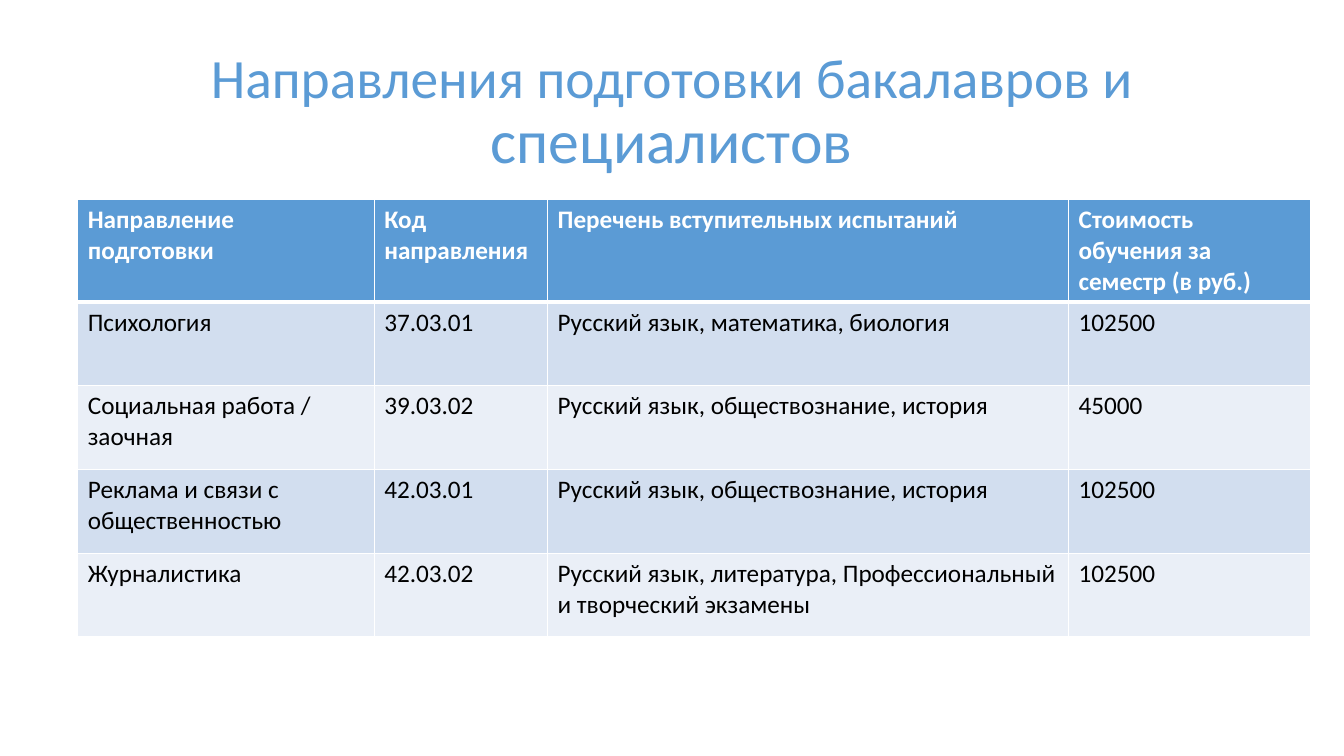
from lxml import etree
from pptx import Presentation
from pptx import util as u
from pptx.dml.color import RGBColor
from pptx.enum import text
from pptx.oxml.ns import qn

HUES = {"blue": "5B9BD5", "mid": "D2DEEF", "pale": "EAEFF7",
        "white": "FFFFFF", "black": "000000"}
HEAD = ["Направление подготовки", "Код направления",
        "Перечень вступительных испытаний",
        "Стоимость обучения за семестр (в руб.)"]
ROWS = [
    ["Психология", "37.03.01", "Русский язык, математика, биология", "102500"],
    ["Социальная работа / заочная", "39.03.02",
     "Русский язык, обществознание, история", "45000"],
    ["Реклама и связи с общественностью", "42.03.01",
     "Русский язык, обществознание, история", "102500"],
    ["Журналистика", "42.03.02",
     "Русский язык, литература, Профессиональный и творческий экзамены",
     "102500"],
]
WIDTHS = [7.47, 4.37, 13.13, 6.1]


def hue(name):
    """Return the colour of that name."""
    return RGBColor.from_string(HUES[name])


def write(para, words, size=18, color="black", bold=False):
    """Add a formatted run to a paragraph."""
    run = para.add_run()
    run.text = words
    font = run.font
    font.name, font.size, font.bold = "Calibri", u.Pt(size), bold
    font.color.rgb = hue(color)


def edge(cell, side, width):
    """Draw one white border of a cell."""
    props = cell._tc.get_or_add_tcPr()
    line = etree.SubElement(props, qn(f"a:{side}"), w=str(u.Pt(width)))
    fill = etree.SubElement(line, qn("a:solidFill"))
    etree.SubElement(fill, qn("a:srgbClr"), val=HUES["white"])


def title(slide, left, top, width, height):
    """Place the two-size heading in its box."""
    shape = slide.shapes.title
    shape.left, shape.top = u.Cm(left), u.Cm(top)
    shape.width, shape.height = u.Cm(width), u.Cm(height)
    frame = shape.text_frame
    frame.auto_size = text.MSO_AUTO_SIZE.NONE
    frame.word_wrap = True
    frame.vertical_anchor = text.MSO_ANCHOR.MIDDLE
    para = frame.paragraphs[0]
    para.alignment = text.PP_ALIGN.CENTER
    para.line_spacing = 0.9
    write(para, "Направления подготовки бакалавров и ", size=39.6, color="blue")
    write(para, "специалистов", size=44.1, color="blue")


def courses(slide, left, top, width, height):
    """Place the table of courses in its box."""
    data = [HEAD] + ROWS
    grid = slide.shapes.add_table(len(data), len(HEAD), u.Cm(left), u.Cm(top),
                                  u.Cm(width), u.Cm(height)).table
    for col, span in zip(grid.columns, WIDTHS):
        col.width = u.Cm(width * span / sum(WIDTHS))
    for r, line in enumerate(data):
        top_row = r == 0
        back = "blue" if top_row else ("pale", "mid")[r % 2]
        for c, words in enumerate(line):
            cell = grid.cell(r, c)
            for side in ("lnL", "lnR", "lnT", "lnB"):
                thick = (top_row and side == "lnB") or (r == 1 and side == "lnT")
                edge(cell, side, 3 if thick else 1)
            cell.fill.solid()
            cell.fill.fore_color.rgb = hue(back)
            write(cell.text_frame.paragraphs[0], words, bold=top_row,
                  color="white" if top_row else "black")


def main():
    """Build and save the slide."""
    deck = Presentation()
    deck.slide_width, deck.slide_height = u.Cm(33.87), u.Cm(19.05)
    slide = deck.slides.add_slide(deck.slide_layouts[5])
    title(slide, 2.54, 1.73, 28.78, 2.26)
    courses(slide, 1.96, 5.03, 31.07, 10.55)
    deck.save("out.pptx")


if __name__ == "__main__":
    main()
